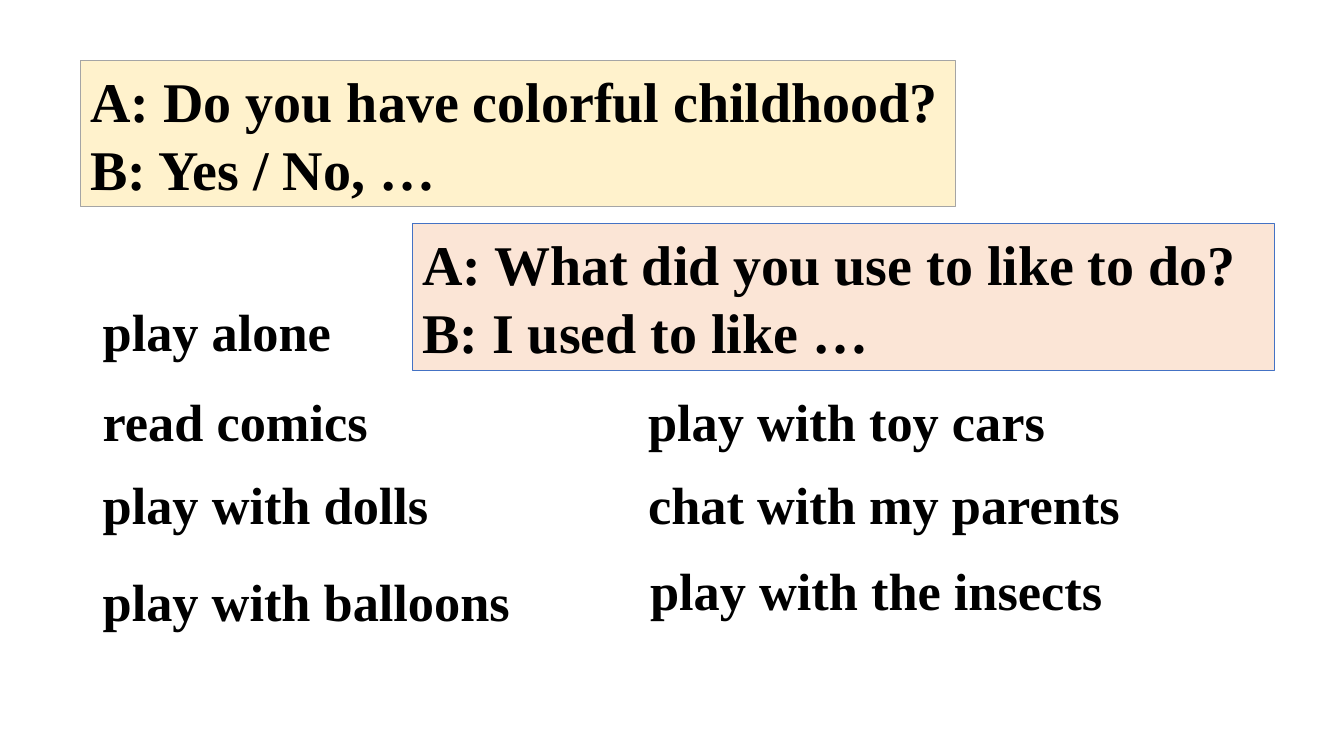
from pptx import Presentation
from pptx import util as u
from pptx.dml.color import RGBColor
from pptx.enum import shapes, text

WIDE, HIGH = 13.33, 7.5
HUES = {"ink": "000000", "peach": "FBE5D6", "blue": "4472C4",
        "cream": "FFF2CC", "gray": "A5A5A5"}
FACE = {"name": "Times New Roman", "bold": True}
LEAD = 1.215
LEFT, RIGHT = 0.92, 6.33
ROWS = (2.91, 3.8, 4.63, 5.59)
HINTS = (
    ("play alone", LEFT, ROWS[0], 2.63),
    ("read comics", LEFT, ROWS[1], 2.97),
    ("play with dolls", LEFT, ROWS[2], 3.75),
    ("play with balloons", LEFT, ROWS[3], 4.44),
    ("play with toy cars", RIGHT, ROWS[1], 4.77),
    ("chat with my parents", RIGHT, ROWS[2], 4.97),
    ("play with the insects", RIGHT + 0.02, 5.48, 5.47),
)
CARDS = (
    (("A: What did you use to like to do?", "B: I used to like …"),
     (4.09, 2.22, 8.55, 1.45), "peach", "blue"),
    (("A: Do you have colorful childhood?", "B: Yes / No, …"),
     (0.8, 0.6, 8.68, 1.45), "cream", "gray"),
)


def hue(name):
    """Return the named colour."""
    return RGBColor.from_string(HUES[name])


def write(shape, lines, size):
    """Put bold left-aligned lines into a shape."""
    frame = shape.text_frame
    form = {"word_wrap": True, "vertical_anchor": text.MSO_ANCHOR.TOP,
            "auto_size": text.MSO_AUTO_SIZE.SHAPE_TO_FIT_TEXT}
    for key, val in form.items():
        setattr(frame, key, val)
    for num, line in enumerate(lines):
        para = frame.add_paragraph() if num else frame.paragraphs[0]
        para.alignment = text.PP_ALIGN.LEFT
        para.line_spacing = u.Pt(round(size * LEAD, 1))
        run = para.add_run()
        run.text = line
        for key, val in FACE.items():
            setattr(run.font, key, val)
        run.font.size = u.Pt(size)
        run.font.color.rgb = hue("ink")


def hint(slide, line, left, top, width):
    """Add one activity phrase."""
    box = slide.shapes.add_textbox(*map(u.Inches, (left, top, width, 1.36)))
    write(box, [line], 37.4)


def card(slide, lines, place, fill, edge):
    """Add one framed dialogue."""
    box = slide.shapes.add_shape(shapes.MSO_SHAPE.RECTANGLE,
                                 *map(u.Inches, place))
    box.shadow.inherit = False
    box.fill.solid()
    box.fill.fore_color.rgb = hue(fill)
    box.line.color.rgb = hue(edge)
    box.line.width = u.Pt(0.5)
    write(box, lines, 40)


def main():
    """Build and save the slide."""
    deck = Presentation()
    deck.slide_width, deck.slide_height = u.Inches(WIDE), u.Inches(HIGH)
    slide = deck.slides.add_slide(deck.slide_layouts[6])
    for item in HINTS:
        hint(slide, *item)
    for item in CARDS:
        card(slide, *item)
    deck.save("out.pptx")


if __name__ == "__main__":
    main()
